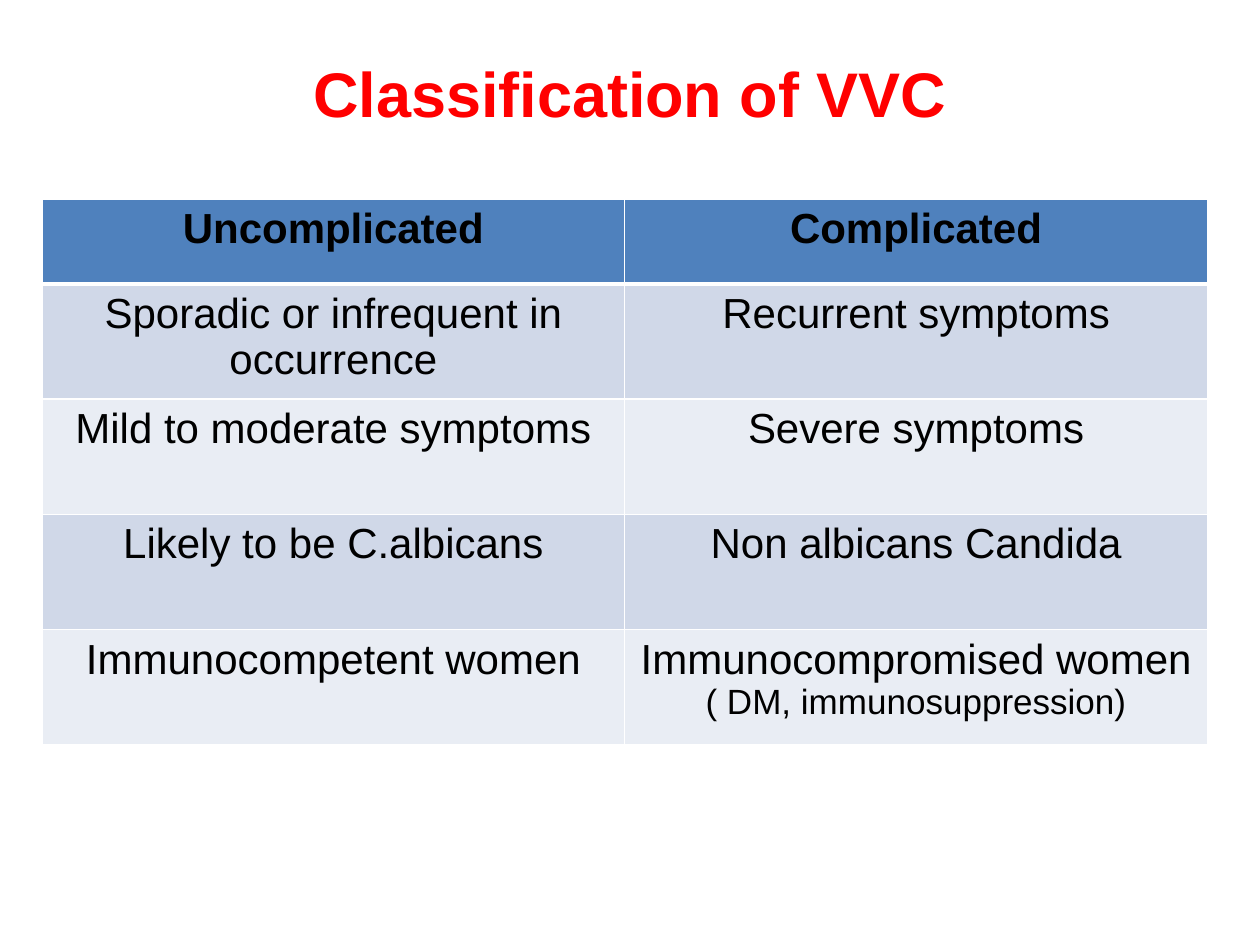
import pptx
import pptx.dml.color
import pptx.enum.text
import pptx.oxml.ns
import pptx.util
from lxml import etree

COLORS = {
    "title": "FF0000",
    "text": "000000",
    "header": "4F81BD",
    "odd_row": "D0D8E8",
    "even_row": "E9EDF4",
    "border": "FFFFFF",
}
FONT = "Arial"
SLIDE_WIDTH = pptx.util.Inches(10)
SLIDE_HEIGHT = pptx.util.Inches(7.5)
HEADER_ROW = 0.67
BODY_ROW = 0.915
ROWS = [
    [["Uncomplicated"], ["Complicated"]],
    [["Sporadic or infrequent in occurrence"], ["Recurrent symptoms"]],
    [["Mild to moderate symptoms"], ["Severe symptoms"]],
    [["Likely to be C.albicans"], ["Non albicans Candida"]],
    [["Immunocompetent women"], ["Immunocompromised women ", "( DM, immunosuppression)"]],
]


def rgb(name):
    return pptx.dml.color.RGBColor.from_string(COLORS[name])


def write_centered(paragraph, texts, size, color, bold):
    for text in texts:
        paragraph.add_run().text = text
    paragraph.alignment = pptx.enum.text.PP_ALIGN.CENTER
    font = paragraph.font
    font.name, font.size, font.bold = FONT, pptx.util.Pt(size), bold
    font.color.rgb = rgb(color)


def set_borders(cell, widths):
    properties = cell._tc.get_or_add_tcPr()
    for side, width in widths.items():
        line = etree.SubElement(
            properties, pptx.oxml.ns.qn(f"a:ln{side}"), w=str(pptx.util.Pt(width))
        )
        fill = etree.SubElement(line, pptx.oxml.ns.qn("a:solidFill"))
        etree.SubElement(fill, pptx.oxml.ns.qn("a:srgbClr"), val=COLORS["border"])


def add_title(slide, box, text):
    frame = slide.shapes.add_textbox(*box).text_frame
    frame.word_wrap = True
    frame.vertical_anchor = pptx.enum.text.MSO_ANCHOR.MIDDLE
    write_centered(frame.paragraphs[0], [text], 36, "title", True)


def add_comparison_table(slide, box, rows):
    table = slide.shapes.add_table(len(rows), len(rows[0]), *box).table
    for row_index, row in enumerate(rows):
        is_header = row_index == 0
        height = HEADER_ROW if is_header else BODY_ROW
        table.rows[row_index].height = pptx.util.Inches(height)
        fill = "header" if is_header else ("even_row", "odd_row")[row_index % 2]
        widths = {
            "L": 1,
            "R": 1,
            "T": 3 if row_index == 1 else 1,
            "B": 3 if is_header else 1,
        }
        for column_index, texts in enumerate(row):
            cell = table.cell(row_index, column_index)
            set_borders(cell, widths)
            cell.fill.solid()
            cell.fill.fore_color.rgb = rgb(fill)
            paragraph = cell.text_frame.paragraphs[0]
            write_centered(paragraph, texts, 24, "text", is_header)
            for note in paragraph.runs[1:]:
                note.font.size = pptx.util.Pt(20)


def share(left, top, width, height):
    return (
        int(SLIDE_WIDTH * left),
        int(SLIDE_HEIGHT * top),
        int(SLIDE_WIDTH * width),
        int(SLIDE_HEIGHT * height),
    )


def main():
    presentation = pptx.Presentation()
    presentation.slide_width = SLIDE_WIDTH
    presentation.slide_height = SLIDE_HEIGHT
    slide = presentation.slides.add_slide(presentation.slide_layouts[6])
    add_title(slide, share(0.05, 0.04, 0.9, 0.116), "Classification of VVC")
    add_comparison_table(slide, share(0.0333, 0.2111, 0.925, 0.5773), ROWS)
    presentation.save("out.pptx")


if __name__ == "__main__":
    main()
